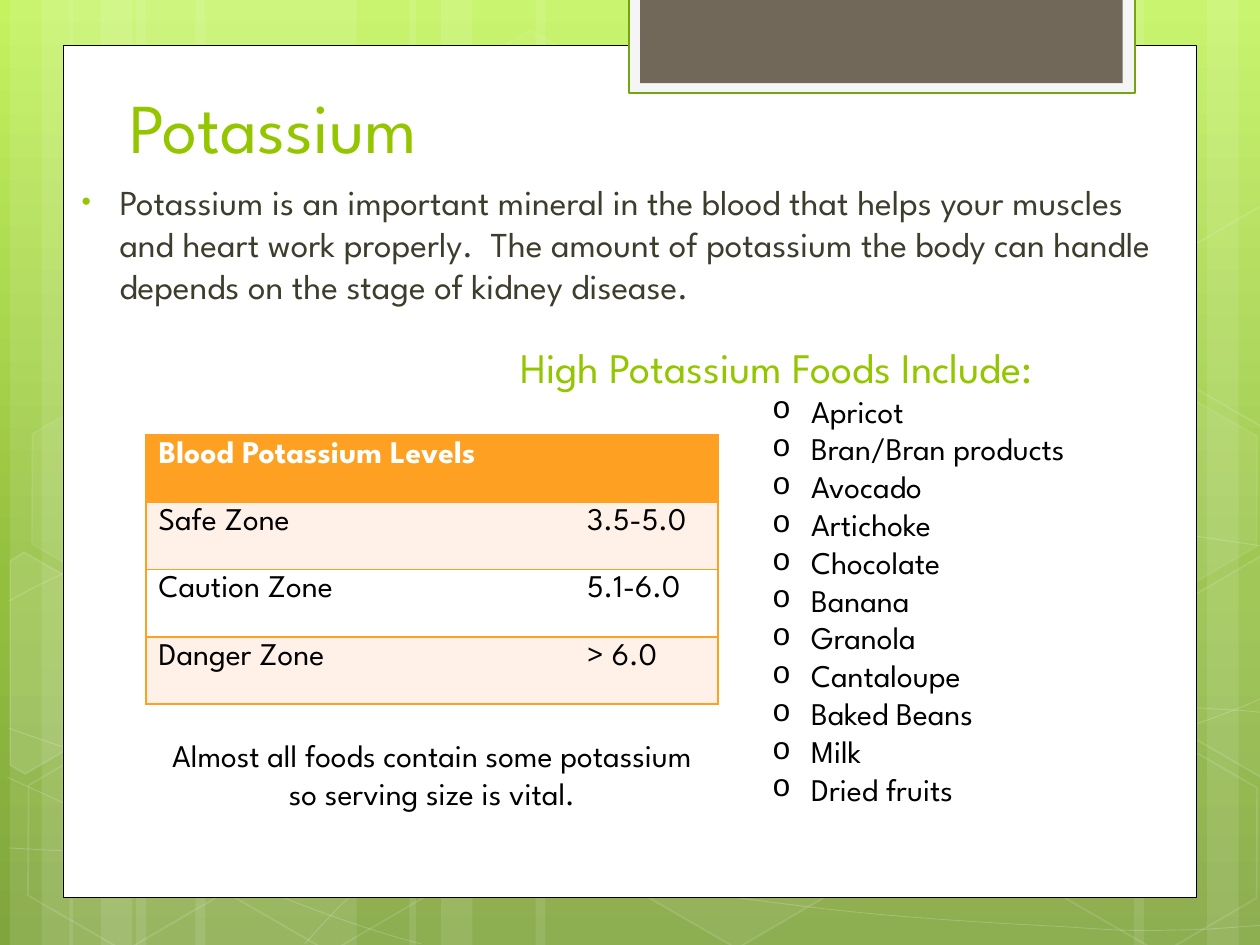
from math import cos, radians, sin

from lxml.etree import SubElement
from pptx import Presentation
from pptx.dml.color import RGBColor
from pptx.enum.shapes import MSO_SHAPE
from pptx.enum.text import MSO_ANCHOR, PP_ALIGN
from pptx.oxml.ns import qn
from pptx.util import Inches, Pt

# Content
TITLE = "Potassium"
INTRO = ("Potassium is an important mineral in the blood that helps your muscles and heart "
         "work properly.  The amount of potassium the body can handle depends on the stage "
         "of kidney disease.")
LEVELS = [("Blood Potassium Levels", ""), ("Safe Zone", "3.5-5.0"),
          ("Caution Zone", "5.1-6.0"), ("Danger Zone", "> 6.0")]
FOODS_HEADING = "High Potassium Foods Include:"
FOODS = ["Apricot", "Bran/Bran products", "Avocado", "Artichoke", "Chocolate", "Banana",
         "Granola", "Cantaloupe", "Baked Beans", "Milk", "Dried fruits"]
NOTE = "Almost all foods contain some potassium so serving size is vital."

FONT = "League Spartan"
COLORS = {"white": "FFFFFF", "black": "000000", "green": "94C600", "body": "3E3D2D",
          "tab_line": "74A510", "tab_edge": "F5F5F5", "tab": "71685A",
          "orange": "FEA022", "band": "FFF0E8"}
BACKDROP = [(0, "C3F35F"), (62, "93BF3F"), (100, "81A53E")]

# Backdrop decoration, in inches: left, width, rotation
BARS = [(1.08, 1.75, 0), (0.08, 0.5, 0), (0.33, 0.83, 0), (1.55, 1.75, 0), (0.55, 0.5, 0),
        (0.8, 0.83, 0), (7.33, 1.75, 180), (9.58, 0.5, 180), (9, 0.83, 180),
        (4.25, 3.08, 0), (3.25, 0.5, 0), (3.5, 0.83, 0)]
# Each curve: a start point, then three Bezier points per segment
CURVES = [
    [(0.07, 6.73), (0.61, 6.76), (1.15, 6.79), (1.9, 6.78), (2.65, 6.77), (3.58, 6.75),
     (4.58, 6.65), (5.58, 6.55), (7, 6.36), (7.92, 6.17), (8.83, 5.98), (9.77, 5.68),
     (10.07, 5.51)],
    [(0.07, 4.77), (0.36, 4.61), (0.65, 4.46), (1.21, 4.31), (1.78, 4.16), (2.59, 3.94),
     (3.47, 3.87), (4.36, 3.8), (5.44, 3.79), (6.54, 3.87), (7.64, 3.95), (9.47, 4.26),
     (10.07, 4.34)],
    [(0.06, 6.17), (1.27, 6.72), (2.47, 7.27), (3.34, 7.49)],
    [(0.07, 5.78), (0.38, 5.89), (0.7, 6), (1.28, 6.16), (1.86, 6.31), (2.73, 6.56),
     (3.57, 6.73), (4.4, 6.9), (5.45, 7.08), (6.28, 7.18), (7.11, 7.29), (8, 7.33),
     (8.53, 7.36), (9.05, 7.4), (9.19, 7.38), (9.45, 7.38), (9.71, 7.37), (9.89, 7.35),
     (10.07, 7.34)],
    [(2.42, 7.49), (2.6, 7.29), (2.78, 7.09), (3.02, 6.91), (3.26, 6.73), (3.6, 6.53),
     (3.88, 6.39), (4.16, 6.25), (4.33, 6.19), (4.7, 6.09), (5.06, 5.99), (5.73, 5.85),
     (6.08, 5.78), (6.44, 5.71), (6.49, 5.71), (6.8, 5.69), (7.11, 5.66), (7.6, 5.63),
     (7.94, 5.62), (8.29, 5.61), (8.86, 5.62), (8.86, 5.62), (8.86, 5.62), (9.53, 5.62),
     (9.53, 5.62), (9.71, 5.63), (9.88, 5.64), (9.97, 5.65), (10.06, 5.66), (10.03, 5.65),
     (10.06, 5.66)],
]
# left, top, fill opacity (None for no fill), line opacity
HEXAGONS = [(3.34, 0.36, 4, 8), (4.97, 5.89, 6, 12), (0.11, 5.91, None, 12),
            (0.14, 3.12, 7, 8), (1.74, 5.92, None, 12), (7.53, 4.53, 10, 12),
            (8.34, 5.93, None, 12), (8.34, 3.14, 7, 8)]
HEXAGON_TURN = 30
# Hexagons cut by the slide edge: centre, corners as they show, fill opacity
CUT_HEXAGONS = [
    ((0.36, 5.35), [(0.08, 4.45), (0.19, 4.38), (0.96, 4.82), (0.95, 5.7), (0.2, 6.14),
                    (0.08, 6.07)], 10),
    ((9.85, 5.2), [(9.26, 4.85), (10.01, 4.41), (10.09, 4.46), (10.09, 6.13),
                   (10.02, 6.17), (9.26, 5.73)], 4),
    ((9.85, 2.41), [(9.26, 2.07), (10.01, 1.63), (10.1, 1.68), (10.09, 3.35),
                    (10.02, 3.39), (9.26, 2.95)], None),
]

prs = Presentation()
prs.slide_width, prs.slide_height = Inches(10), Inches(7.5)
slide = prs.slides.add_slide(prs.slide_layouts[6])


def paint(fill, color, opacity=100):
    fill.solid()
    fill.fore_color.rgb = RGBColor.from_string(COLORS[color])
    if opacity < 100:
        rgb = fill._xPr.find(".//" + qn("a:srgbClr"))
        SubElement(rgb, qn("a:alpha"), val=str(opacity * 1000))


def style(shape, fill=None, fill_opacity=100, line=None, width=1, line_opacity=100):
    shape.shadow.inherit = False
    if fill and fill_opacity:
        paint(shape.fill, fill, fill_opacity)
    else:
        shape.fill.background()
    if line:
        shape.line.width = Pt(width)
        paint(shape.line.fill, line, line_opacity)
    else:
        shape.line.fill.background()


def add_box(box, kind=MSO_SHAPE.RECTANGLE, rotation=0, **look):
    shape = slide.shapes.add_shape(kind, *map(Inches, box))
    shape.rotation = rotation
    style(shape, **look)
    return shape


def add_outline(points, close, **look):
    points = [(Inches(x), Inches(y)) for x, y in points]
    builder = slide.shapes.build_freeform(*points[0])
    builder.add_line_segments(points[1:], close=close)
    shape = builder.convert_to_shape()
    style(shape, **look)
    return shape


def bend(shape):
    """Turn every three straight segments into one Bezier segment."""
    outline = shape._element.find(".//" + qn("a:path"))
    segments = outline.findall(qn("a:lnTo"))
    for i in range(0, len(segments), 3):
        curve = SubElement(outline, qn("a:cubicBezTo"))
        for segment in segments[i:i + 3]:
            curve.append(segment[0])
            outline.remove(segment)


def turn_back(point, center):
    x, y = point[0] - center[0], point[1] - center[1]
    c, s = cos(radians(HEXAGON_TURN)), sin(radians(HEXAGON_TURN))
    return center[0] + x * c + y * s, center[1] - x * s + y * c


def write(paragraph, text, size=18, color="black", bold=False, align=PP_ALIGN.LEFT, before=0,
          bullet=None, indent=(0, 0), bullet_color=None, bullet_size=100, bullet_font=FONT):
    paragraph.alignment = align
    paragraph.space_before = Pt(before)
    run = paragraph.add_run()
    run.text = text
    run.font.name, run.font.size, run.font.bold = FONT, Pt(size), bold
    run.font.color.rgb = RGBColor.from_string(COLORS[color])
    if bullet:
        props = paragraph._p.get_or_add_pPr()
        props.set("marL", str(Inches(indent[0])))
        props.set("indent", str(Inches(indent[1])))
        tint = SubElement(props, qn("a:buClr"))
        SubElement(tint, qn("a:srgbClr"), val=COLORS[bullet_color or color])
        SubElement(props, qn("a:buSzPct"), val=str(bullet_size * 1000))
        SubElement(props, qn("a:buFont"), typeface=bullet_font)
        SubElement(props, qn("a:buChar"), char=bullet)


def add_frame(box, anchor=MSO_ANCHOR.TOP):
    frame = slide.shapes.add_textbox(*map(Inches, box)).text_frame
    frame.word_wrap = True
    frame.vertical_anchor = anchor
    return frame


def set_borders(cell, hidden):
    props = cell._tc.get_or_add_tcPr()
    for index, side in enumerate(("lnL", "lnR", "lnT", "lnB")):
        border = SubElement(props, qn("a:" + side), w=str(Pt(1)))
        props.insert(index, border)
        if side == hidden:
            SubElement(border, qn("a:noFill"))
        else:
            solid = SubElement(border, qn("a:solidFill"))
            SubElement(solid, qn("a:srgbClr"), val=COLORS["orange"])


# Gradient backdrop
backdrop = slide.background.fill
backdrop.gradient()
backdrop.gradient_angle = 270
stops = slide.element.find(".//" + qn("a:gsLst"))
for stop in list(stops):
    stops.remove(stop)
for position, shade in BACKDROP:
    stop = SubElement(stops, qn("a:gs"), pos=str(position * 1000))
    SubElement(stop, qn("a:srgbClr"), val=shade)

# Translucent bars, curves and hexagons
for left, width, rotation in BARS:
    add_box((left, 0, width, 7.5), rotation=rotation, fill="white", fill_opacity=10)
for curve in CURVES:
    bend(add_outline(curve, False, line="white", width=0.5, line_opacity=20))
for left, top, opacity, line_opacity in HEXAGONS:
    hexagon = add_box((left, top, 1.75, 1.52), MSO_SHAPE.HEXAGON, HEXAGON_TURN, fill="white",
                      fill_opacity=opacity, line="white", line_opacity=line_opacity)
    hexagon.adjustments[0] = 0.285
for center, corners, opacity in CUT_HEXAGONS:
    cut_hexagon = add_outline([turn_back(corner, center) for corner in corners], True,
                              fill="white", fill_opacity=opacity, line="white",
                              line_opacity=12)
    cut_hexagon.rotation = HEXAGON_TURN

# White panel with the tab at its top
add_box((0.5, 0.36, 9, 6.76), fill="white", line="black", width=0.5)
add_box((4.99, -0.02, 4.02, 0.76), fill="tab_edge", line="tab_line", width=1.25)
add_box((5.08, -0.02, 3.83, 0.68), fill="tab")

# Title and introduction
title = add_frame((0.93, 0.13, 7.68, 1.25), MSO_ANCHOR.BOTTOM)
write(title.paragraphs[0], TITLE, size=40, color="green")
intro = add_frame((0.47, 1.38, 8.85, 4.97))
write(intro.paragraphs[0], INTRO, size=20, color="body", before=4, bullet="•",
      indent=(0.38, -0.3), bullet_color="green", bullet_size=76, bullet_font="Arial")

# Blood level table
levels = slide.shapes.add_table(len(LEVELS), 2, Inches(1.16), Inches(3.45),
                                Inches(4.54), Inches(2.14)).table
levels.columns[0].width, levels.columns[1].width = Inches(3.4), Inches(1.14)
for row, values in enumerate(LEVELS):
    for column, value in enumerate(values):
        cell = levels.cell(row, column)
        paint(cell.fill, "orange" if row == 0 else "band" if row % 2 else "white")
        set_borders(cell, hidden=("lnR", "lnL")[column])
        if value:
            write(cell.text_frame.paragraphs[0], value, bold=row == 0,
                  color="black" if row else "white")

# Food list and closing note
foods = add_frame((4.03, 2.66, 5.42, 4.14))
write(foods.paragraphs[0], FOODS_HEADING, size=24, color="green")
for food in FOODS:
    item = foods.add_paragraph()
    item.level = 4
    write(item, food, bullet="o", indent=(2.31, -0.31), bullet_font="Courier New")
note = add_frame((1.16, 5.79, 4.54, 1.01))
write(note.paragraphs[0], NOTE, align=PP_ALIGN.CENTER)

prs.save("out.pptx")
